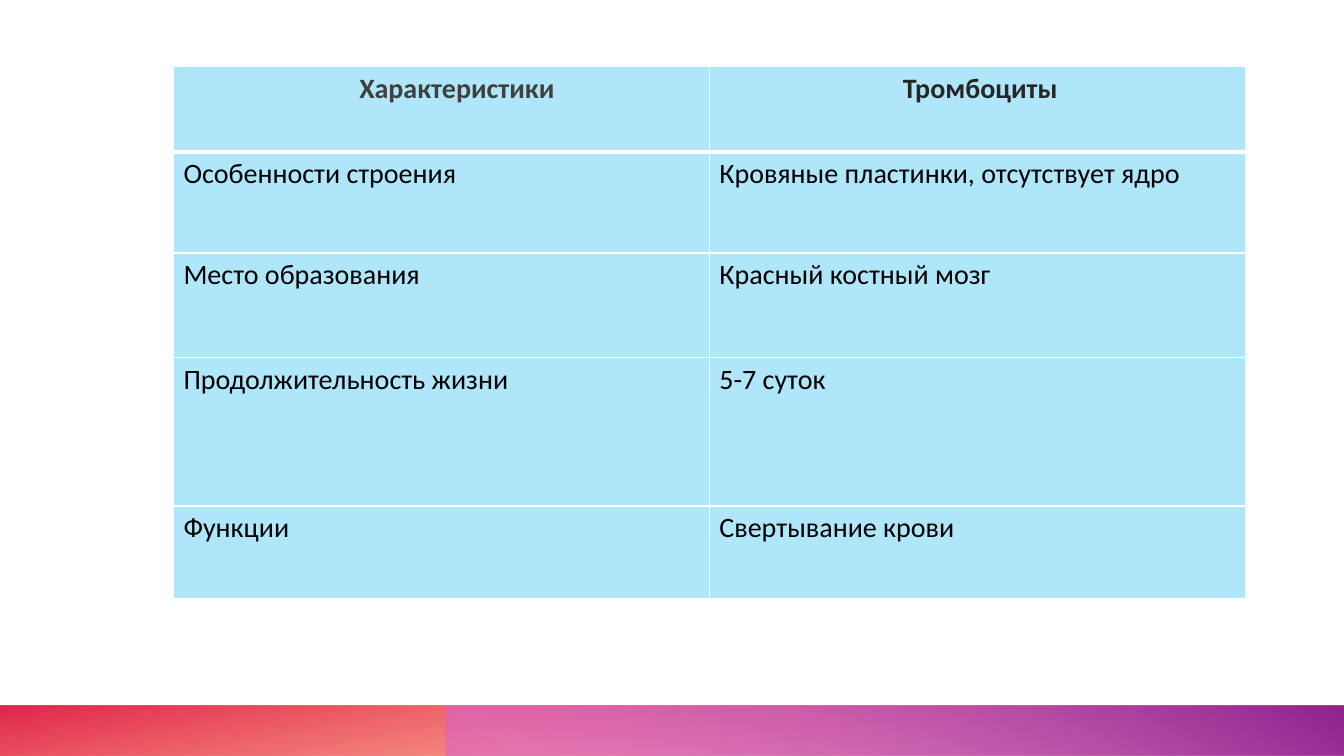
from lxml import etree
from pptx import Presentation
from pptx.dml.color import RGBColor
from pptx.enum import shapes, text
from pptx.oxml import ns
from pptx.util import Inches, Pt

BLACK = RGBColor(0x00, 0x00, 0x00)
DARK_GREY = RGBColor(0x40, 0x40, 0x40)
NEAR_BLACK = RGBColor(0x26, 0x26, 0x26)
SKY = RGBColor(0x00, 0xB0, 0xF0)
WHITE = RGBColor(0xFF, 0xFF, 0xFF)
ORANGE = RGBColor(0xFE, 0x4A, 0x00)
RED = RGBColor(0xDA, 0x00, 0x2F)
PINK = RGBColor(0xD8, 0x61, 0xD4)
PURPLE = RGBColor(0x92, 0x24, 0x8E)


def add(parent, tag, **attrs):
    values = {name: str(value) for name, value in attrs.items()}
    return etree.SubElement(parent, ns.qn(tag), values)


def add_color(parent, color, opacity=100):
    clr = add(parent, "a:srgbClr", val=color)
    if opacity < 100:
        add(clr, "a:alpha", val=opacity * 1000)


prs = Presentation()
prs.slide_width, prs.slide_height = Inches(13.33), Inches(7.5)
s = prs.slides.add_slide(prs.slide_layouts[6])

# Footer bars: left, width, rotation, gradient angle, stops (position, colour, opacity)
bars = [
    (0, 13.33, 180, 100, [(14, ORANGE, 28), (100, RED, 85)]),
    (4.42, 8.91, 0, 240, [(9, PINK, 55), (99, PURPLE, 100)]),
]
for left, width, rotation, angle, stops in bars:
    sp = s.shapes.add_shape(shapes.MSO_SHAPE.RECTANGLE, Inches(left), Inches(7),
                            Inches(width), Inches(0.5))
    sp.shadow.inherit = False
    sp.line.fill.background()
    sp.rotation = rotation
    sp._element.spPr.xfrm.set("flipH", "1")
    sp.fill.gradient()
    grad = sp._element.spPr.find(ns.qn("a:gradFill"))
    for child in list(grad):
        grad.remove(child)
    gs_list = add(grad, "a:gsLst")
    for position, color, opacity in stops:
        add_color(add(gs_list, "a:gs", pos=position * 1000), color, opacity)
    add(grad, "a:lin", ang=angle * 60000, scaled=0)

# Table of platelet characteristics
rows = [
    ("Характеристики", "Тромбоциты"),
    ("Особенности строения", "Кровяные пластинки, отсутствует ядро"),
    ("Место образования", "Красный костный мозг"),
    ("Продолжительность жизни", "5-7 суток"),
    ("Функции", "Свертывание крови"),
]
row_heights = [0.85, 1, 1.04, 1.47, 0.92]
header_colors = [DARK_GREY, NEAR_BLACK]
header_margins = [0.41, 0.16]

table = s.shapes.add_table(len(rows), 2, Inches(1.72), Inches(0.66),
                           Inches(10.63), Inches(sum(row_heights))).table
table.horz_banding = False
for column in table.columns:
    column.width = Inches(5.315)

for i, (labels, height) in enumerate(zip(rows, row_heights)):
    table.rows[i].height = Inches(height)
    for j, label in enumerate(labels):
        cell = table.cell(i, j)
        header = i == 0

        # White borders, heavier under the header
        tc_pr = cell._tc.get_or_add_tcPr()
        widths = {"L": 1, "R": 1, "T": 3 if i == 1 else 1, "B": 3 if header else 1}
        for side, points in widths.items():
            ln = add(tc_pr, f"a:ln{side}", w=Pt(points))
            add_color(add(ln, "a:solidFill"), WHITE)

        # Translucent fill
        cell.fill.solid()
        cell.fill.fore_color.rgb = SKY
        add(tc_pr.find(ns.qn("a:solidFill"))[0], "a:alpha", val=31000)

        # Text
        p = cell.text_frame.paragraphs[0]
        r = p.add_run()
        r.text = label
        if header:
            p.alignment = text.PP_ALIGN.CENTER
            cell.margin_left = Inches(header_margins[j])
        font_format = {"name": "Calibri", "size": Pt(20), "bold": header}
        for name, value in font_format.items():
            setattr(r.font, name, value)
        r.font.color.rgb = header_colors[j] if header else BLACK

prs.save("out.pptx")
